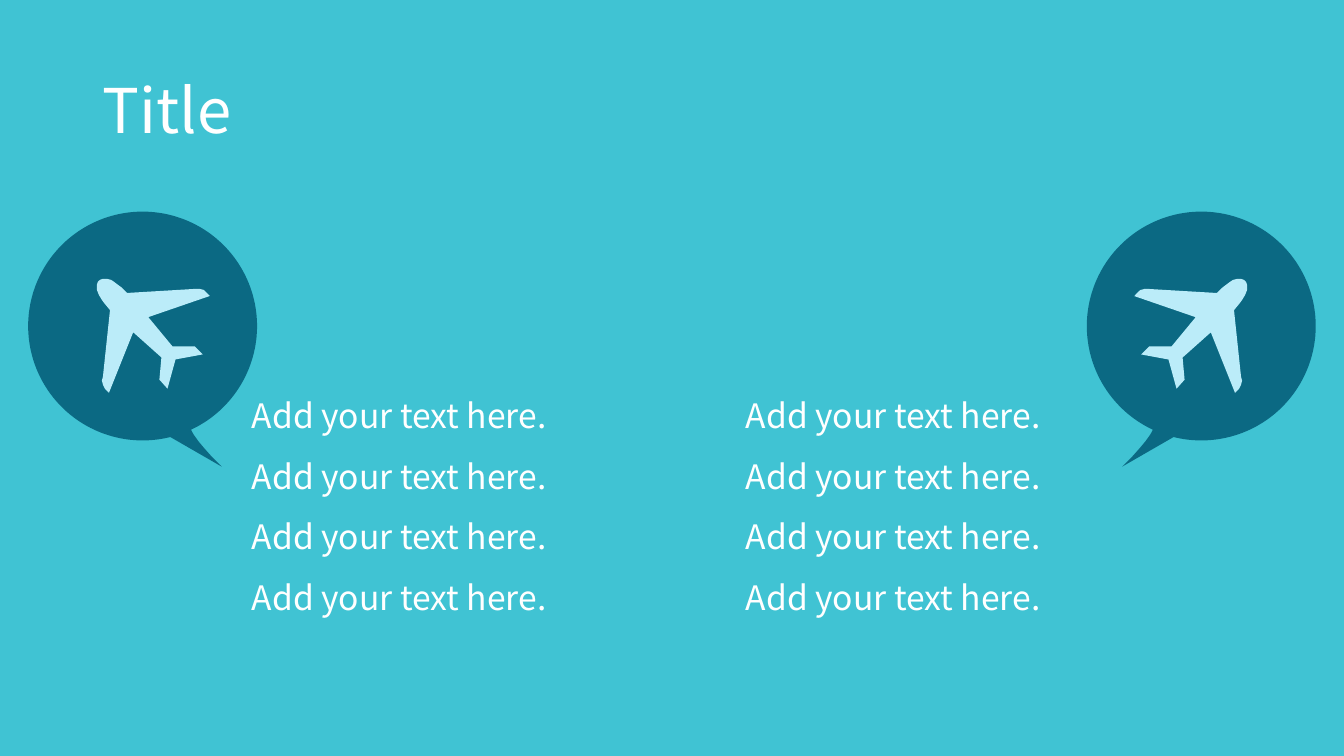
from dataclasses import dataclass
from math import cos, radians, sin

from pptx import Presentation
from pptx.dml.color import RGBColor
from pptx.enum.text import MSO_ANCHOR, PP_ALIGN
from pptx.util import Inches, Pt

MIDDLE, TOP, LEFT = MSO_ANCHOR.MIDDLE, MSO_ANCHOR.TOP, PP_ALIGN.LEFT
WIDTH, HEIGHT = 13.33, 7.5
COLORS = {"back": "40C3D3", "bubble": "0B6983", "plane": "BBECF9", "text": "FFFFFF"}
FACE = "Noto Sans CJK JP"
LINE = "Add your text here."
RADIUS = 2.27 / 2
CENTER = (0.28 + RADIUS, 2.1 + RADIUS)
PIVOT, TILT = (1.41, 3.25), 46.4
TAIL = [(1.92, 4.31), (1.97, 4.38), (2.02, 4.44), (2.1, 4.53), (2.2, 4.63)]
PLANE = [
    (1.22, 2.86), (1.27, 2.91), (1.94, 2.87), (1.99, 2.87), (2.03, 2.88),
    (2.05, 2.9), (2.09, 2.94), (1.48, 3.15), (1.72, 3.44), (1.94, 3.44),
    (2.02, 3.52), (1.75, 3.57), (1.67, 3.86), (1.59, 3.77), (1.61, 3.55),
    (1.33, 3.3), (1.09, 3.9), (1.05, 3.86), (1.03, 3.82), (1.02, 3.78),
    (1.03, 3.74), (1.1, 3.08), (1.05, 3.02), (1.02, 2.98), (0.99, 2.93),
    (0.97, 2.88), (0.97, 2.83), (0.98, 2.8), (1, 2.78), (1.03, 2.77),
    (1.07, 2.77), (1.11, 2.78), (1.14, 2.8), (1.18, 2.83),
]


@dataclass
class Block:
    """A block of text with its place and format."""
    text: str
    box: tuple[float, float, float, float]
    size: int
    space: float
    anchor: MSO_ANCHOR


TITLE = Block("Title", (0.92, 0.4, 11.5, 1.45), 44, 0.9, MIDDLE)
BODIES = [Block(" ".join([LINE] * 4), (x, 3.67, 3.56, 3.28), 24, 1.5, TOP)
          for x in (7.3, 2.4)]


def color(name: str) -> RGBColor:
    """Return the named colour."""
    return RGBColor.from_string(COLORS[name])


def assign(target: object, values: dict) -> None:
    """Set each format value on the target."""
    for key, value in values.items():
        setattr(target, key, value)


def write(shape, block: Block) -> None:
    """Place a shape and fill it with the text of a block."""
    places = map(Inches, block.box)
    assign(shape, dict(zip(("left", "top", "width", "height"), places)))
    frame = shape.text_frame
    frame.text = block.text
    assign(frame, {"word_wrap": True, "vertical_anchor": block.anchor})
    para = frame.paragraphs[0]
    assign(para, {"line_spacing": block.space, "alignment": LEFT})
    font = para.runs[0].font
    assign(font, {"name": FACE, "size": Pt(block.size)})
    font.color.rgb = color("text")


def bubble() -> list[tuple[float, float]]:
    """Return the outline of the left speech bubble."""
    arc = [(CENTER[0] + RADIUS * cos(radians(a)), CENTER[1] + RADIUS * sin(radians(a)))
           for a in range(76, 426)]
    return arc + TAIL


def level(x: float, y: float) -> tuple[float, float]:
    """Turn a point of the plane back by its tilt."""
    across, down = x - PIVOT[0], y - PIVOT[1]
    c, s = cos(radians(TILT)), sin(radians(TILT))
    return PIVOT[0] + across * c + down * s, PIVOT[1] + down * c - across * s


def draw(group, points: list[tuple[float, float]], fill: str, flip: bool,
         tilt: float = 0) -> None:
    """Draw a filled outline, mirrored across the slide if asked."""
    spots = [(Inches(WIDTH - x if flip else x), Inches(y)) for x, y in points]
    pen = group.shapes.build_freeform(*spots[0])
    pen.add_line_segments(spots[1:])
    shape = pen.convert_to_shape()
    shape.rotation = -tilt if flip else tilt
    shape.shadow.inherit = False
    shape.fill.solid()
    shape.fill.fore_color.rgb = color(fill)
    shape.line.fill.background()


def main() -> None:
    """Build and save the slide."""
    deck = Presentation()
    assign(deck, {"slide_width": Inches(WIDTH), "slide_height": Inches(HEIGHT)})
    slide = deck.slides.add_slide(deck.slide_layouts[5])
    slide.background.fill.solid()
    slide.background.fill.fore_color.rgb = color("back")
    write(slide.shapes.title, TITLE)
    for block in BODIES:
        write(slide.shapes.add_textbox(0, 0, 0, 0), block)
    plane = [level(x, y) for x, y in PLANE]
    for flip in (True, False):
        group = slide.shapes.add_group_shape()
        draw(group, bubble(), "bubble", flip)
        draw(group, plane, "plane", flip, TILT)
    deck.save("out.pptx")


if __name__ == "__main__":
    main()
